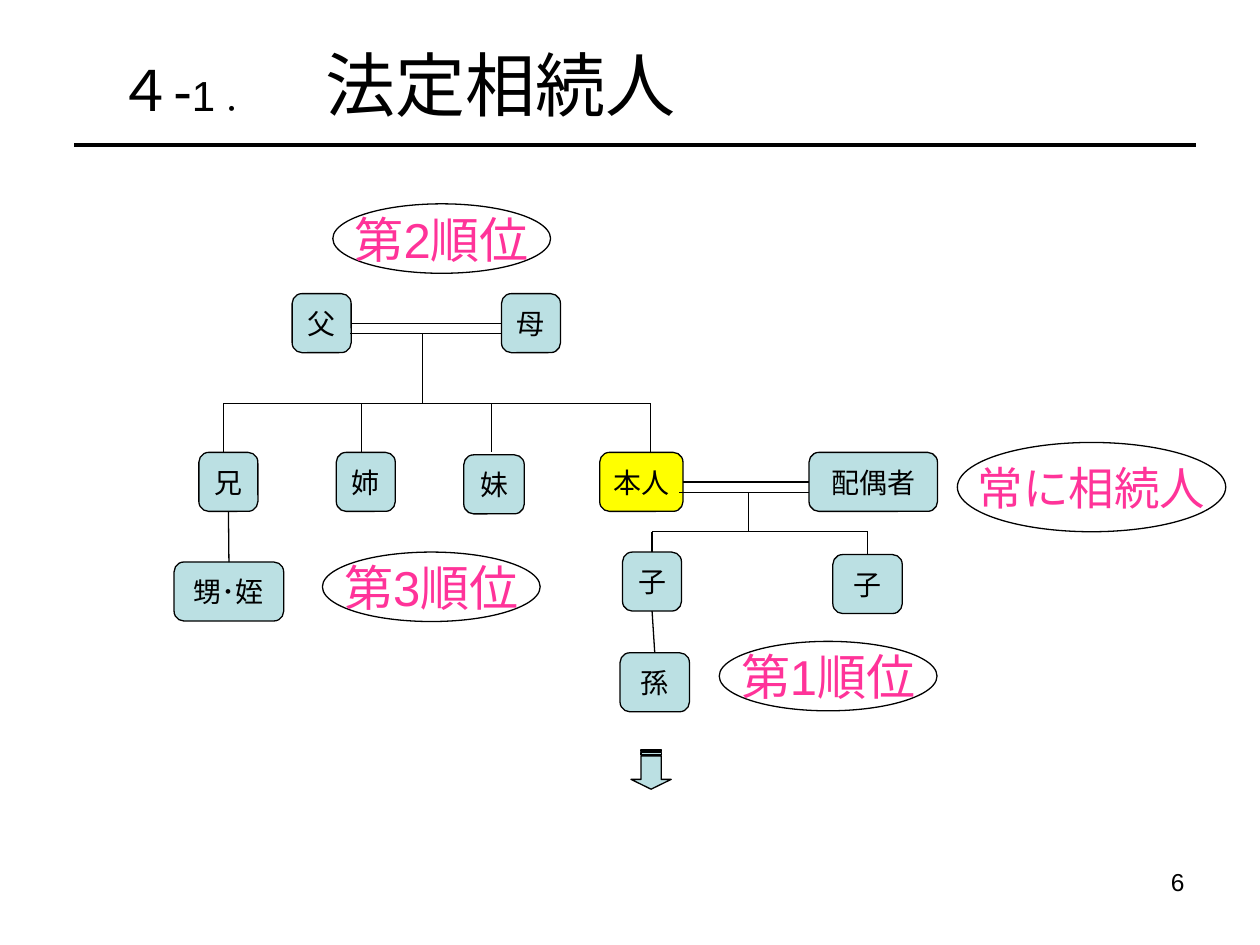
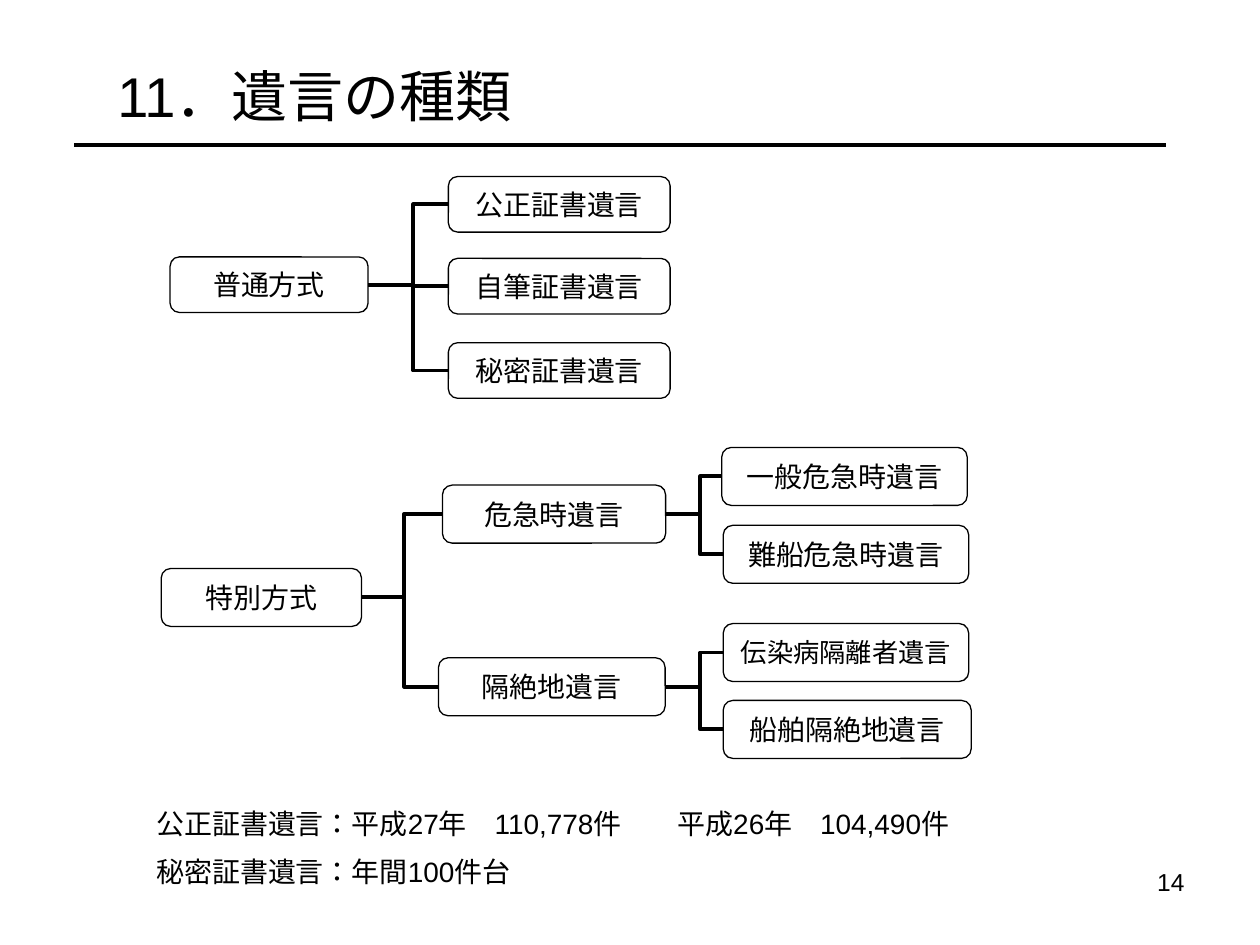
from dataclasses import dataclass

from pptx import Presentation
from pptx import util as u
from pptx.dml.color import RGBColor
from pptx.enum import lang, shapes, text
from pptx.oxml.ns import qn
from lxml import etree

TOP, LEFT, BOTTOM, RIGHT = range(4)
FORM = shapes.MSO_SHAPE
WIRE = shapes.MSO_CONNECTOR
ALIGN = text.PP_ALIGN
ANCHOR = text.MSO_ANCHOR


@dataclass(frozen=True)
class Theme:
    font: str = "Arial"
    ink: str = "000000"
    kin: str = "BBE0E3"
    self: str = "FFFF00"
    rank: str = "FF3399"
    thin: float = 0.75
    thick: float = 2.25
    title: int = 32
    label: int = 16
    place: int = 28
    page: int = 14


def write(frame, paras, size, color=Theme.ink, align=ALIGN.LEFT,
          anchor=ANCHOR.TOP, wrap=True, gap=0):
    """Fill a frame; each paragraph is a string or a list of (string, size)."""
    frame.auto_size = text.MSO_AUTO_SIZE.NONE
    frame.word_wrap = wrap
    frame.vertical_anchor = anchor
    for i, parts in enumerate(paras):
        para = frame.add_paragraph() if i else frame.paragraphs[0]
        para.alignment = align
        para.space_before = u.Pt(gap if i else 0)
        if isinstance(parts, str):
            parts = [(parts, size)]
        for words, points in parts:
            run = para.add_run()
            run.text = words
            run.font.name = Theme.font
            run.font.size = u.Pt(points)
            run.font.color.rgb = RGBColor.from_string(color)
            run.font.language_id = lang.MSO_LANGUAGE_ID.JAPANESE


def cm(*values):
    return [u.Cm(v) for v in values]


class Deck:
    def __init__(self, theme):
        self.theme = theme
        self.file = Presentation()
        self.file.slide_width, self.file.slide_height = cm(25.4, 19.05)
        self.slide = None

    def start(self, layout, parts, top, height, end, page):
        """Open a slide with its title, rule and page number."""
        self.slide = self.file.slides.add_slide(self.file.slide_layouts[layout])
        title = self.slide.shapes.title
        self.move(title, 2.11, top, 20.8, height)
        write(title.text_frame, [parts], self.theme.title)
        self.line(1.5, 2.92, end, 2.92, self.theme.thick)
        box = self.slide.shapes.add_textbox(*cm(18.21, 17.35, 5.92, 1.32))
        write(box.text_frame, [page], self.theme.page, align=ALIGN.RIGHT)

    def move(self, shape, *area):
        shape.left, shape.top, shape.width, shape.height = cm(*area)

    def shape(self, form, area, fill=None):
        item = self.slide.shapes.add_shape(form, *cm(*area))
        item.shadow.inherit = False
        if fill:
            item.fill.solid()
            item.fill.fore_color.rgb = RGBColor.from_string(fill)
        else:
            item.fill.background()
        item.line.color.rgb = RGBColor.from_string(self.theme.ink)
        item.line.width = u.Pt(self.theme.thin)
        return item

    def label(self, form, words, area, fill=None, size=Theme.label, color=Theme.ink):
        item = self.shape(form, area, fill)
        write(item.text_frame, [words], size, color, ALIGN.CENTER,
              ANCHOR.MIDDLE, wrap=False)
        return item

    def box(self, words, *area, **style):
        return self.label(FORM.ROUNDED_RECTANGLE, words, area, **style)

    def oval(self, words, *area, size=Theme.place):
        return self.label(FORM.OVAL, words, area, size=size, color=self.theme.rank)

    def wire(self, kind, ends, width):
        item = self.slide.shapes.add_connector(kind, *ends)
        item.line.color.rgb = RGBColor.from_string(self.theme.ink)
        item.line.width = u.Pt(width)
        etree.SubElement(item._element.spPr, qn("a:effectLst"))
        return item

    def line(self, x1, y1, x2, y2, width=Theme.thin):
        return self.wire(WIRE.STRAIGHT, cm(x1, y1, x2, y2), width)

    def link(self, start, side, end, other):
        item = self.line(0, 0, 1, 1)
        item.begin_connect(start, side)
        item.end_connect(end, other)

    def drop(self, y, box):
        """Run a line from height y down to the top of a box."""
        mid = box.left + box.width // 2
        item = self.wire(WIRE.STRAIGHT, (mid, u.Cm(y), mid, box.top), self.theme.thin)
        item.end_connect(box, TOP)

    def fork(self, root, trunk, leaves):
        """Join a box to those on its right, bending at x = trunk."""
        start = root.left + root.width
        for leaf in leaves:
            ends = (start, root.top + root.height // 2,
                    leaf.left, leaf.top + leaf.height // 2)
            item = self.wire(WIRE.ELBOW, ends, self.theme.thick)
            item.begin_connect(root, RIGHT)
            item.end_connect(leaf, LEFT)
            bend = round((u.Cm(trunk) - start) / (leaf.left - start) * 100000)
            guides = item._element.spPr.find(qn("a:prstGeom")).find(qn("a:avLst"))
            etree.SubElement(guides, qn("a:gd"), name="adj1", fmla=f"val {bend}")

    def notes(self, paras, *area):
        body = self.slide.placeholders[1]
        self.move(body, *area)
        write(body.text_frame, paras, self.theme.label, gap=8)
        for para in body.text_frame.paragraphs:
            props = para._p.get_or_add_pPr()
            props.set("marL", "0")
            props.set("indent", "0")
            etree.SubElement(props, qn("a:buNone"))


def heirs(deck):
    deck.start(5, [("４-", 32), ("1", 24), (" ．", 18), ("　法定相続人", 40)],
               0.71, 1.96, 24.1, "6")
    people = [
        ("父", 5.89, 5.92, 1.19), ("母", 10.11, 5.92, 1.19),
        ("兄", 4.01, 9.12, 1.19), ("姉", 6.78, 9.12, 1.19),
        ("妹", 9.35, 9.17, 1.22), ("本人", 12.09, 9.12, 1.68),
        ("配偶者", 16.31, 9.12, 2.59), ("甥･姪", 3.51, 11.33, 2.21),
        ("子", 12.55, 11.13, 1.19), ("子", 16.79, 11.18, 1.4),
        ("孫", 12.5, 13.16, 1.4),
    ]
    kin = [deck.box(name, x, y, width, 1.19,
                    fill=deck.theme.self if name == "本人" else deck.theme.kin)
           for name, x, y, width in people]
    dad, mum, bro, _, _, own, mate, niece, son, girl, grand = kin

    deck.link(dad, RIGHT, mum, LEFT)
    deck.line(7.06, 6.73, 10.11, 6.73)
    deck.line(8.51, 6.73, 8.51, 8.13)
    deck.line(4.5, 8.13, 13.11, 8.13)
    for x in (4.5, 7.29, 9.91, 13.11):
        deck.line(x, 8.13, x, 9.12)

    deck.link(own, RIGHT, mate, LEFT)
    deck.line(13.69, 9.93, 16.31, 9.93)
    deck.line(15.09, 9.93, 15.09, 10.72)
    deck.line(13.14, 10.72, 17.49, 10.72)
    for child in (son, girl):
        deck.drop(10.72, child)
    deck.link(son, BOTTOM, grand, TOP)
    deck.link(bro, BOTTOM, niece, TOP)

    arrow = deck.shape(FORM.STRIPED_RIGHT_ARROW, (12.73, 15.11, 0.79, 0.81),
                       deck.theme.kin)
    arrow.rotation = 90
    arrow.adjustments[0], arrow.adjustments[1] = 0.5, 0.25

    deck.oval("常に相続人", 19.3, 8.92, 5.41, 1.8, size=26)
    for rank, x, y in (("1", 14.5, 12.93), ("2", 6.71, 4.11), ("3", 6.5, 11.13)):
        deck.oval(f"第{rank}順位", x, y, 4.39, 1.4)


def wills(deck):
    deck.start(1, "11．遺言の種類", 1.12, 1.6, 23.5, "14")
    plain = deck.box("普通方式", 3.43, 5.18, 3.99, 1.12)
    kinds = [deck.box(f"{name}証書遺言", 9.04, y, 4.47, 1.12)
             for name, y in (("公正", 3.56), ("自筆", 5.21), ("秘密", 6.91))]
    deck.fork(plain, 8.33, kinds)

    high = 1.17
    special = deck.box("特別方式", 3.25, 11.46, 4.04, high)
    urgent = deck.box("危急時遺言", 8.92, 9.78, 4.5, high)
    remote = deck.box("隔絶地遺言", 8.84, 13.26, 4.57, high)
    deck.fork(special, 8.15, [urgent, remote])
    deck.fork(urgent, 14.12, [
        deck.box("一般危急時遺言", 14.55, 9.02, 4.95, high),
        deck.box("難船危急時遺言", 14.58, 10.59, 4.95, high)])
    deck.fork(remote, 14.12, [
        deck.box("伝染病隔離者遺言", 14.58, 12.57, 4.95, high, size=15),
        deck.box("船舶隔絶地遺言", 14.58, 14.12, 5, high)])

    deck.notes(["公正証書遺言：平成27年　110,778件　　平成26年　104,490件",
                "秘密証書遺言：年間100件台"], 2.9, 16.13, 18.59, 1.96)


def main():
    deck = Deck(Theme())
    heirs(deck)
    wills(deck)
    deck.file.save("out.pptx")


if __name__ == "__main__":
    main()
